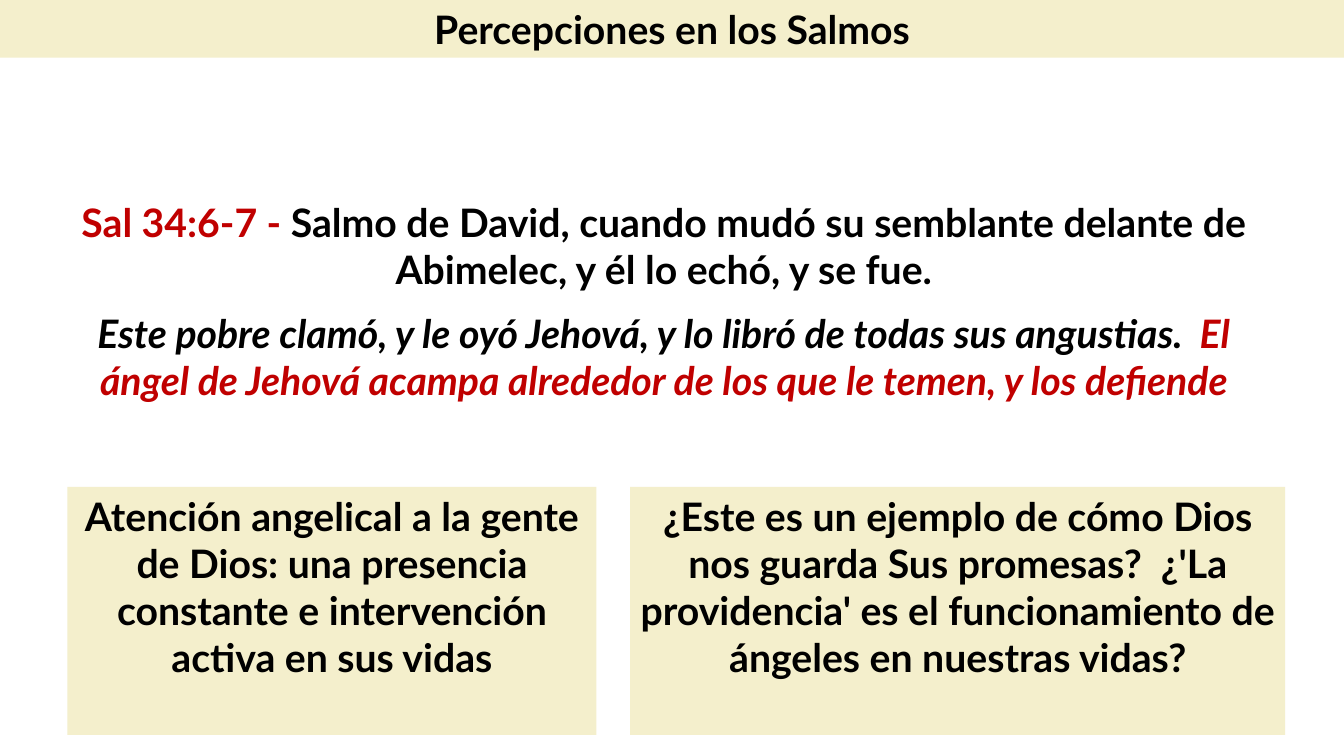
"""Build the slide on Psalm 34 and the care of angels."""
import pptx
import pptx.dml.color
import pptx.enum.shapes
import pptx.enum.text
import pptx.oxml.ns
import pptx.util
from dataclasses import dataclass
from pptx.util import Cm


@dataclass(frozen=True)
class Theme:
    font: str = "Lato"
    size: int = 28
    ink: str = "000000"
    accent: str = "C00000"
    cream: str = "F4EFCC"


theme = Theme()


def style_run(run, color, italic=False):
    run.font.name = theme.font
    run.font.size = pptx.util.Pt(theme.size)
    run.font.bold = True
    run.font.italic = italic
    run.font.color.rgb = pptx.dml.color.RGBColor.from_string(color)


def place(block, left, top, width, height, fill=None):
    block.left, block.top = Cm(left), Cm(top)
    block.width, block.height = Cm(width), Cm(height)
    block.text_frame.word_wrap = True
    block.text_frame.auto_size = pptx.enum.text.MSO_AUTO_SIZE.NONE
    block.text_frame.vertical_anchor = pptx.enum.text.MSO_ANCHOR.TOP
    if fill:
        block.fill.solid()
        block.fill.fore_color.rgb = pptx.dml.color.RGBColor.from_string(fill)
    for paragraph in block.text_frame.paragraphs:
        paragraph.alignment = pptx.enum.text.PP_ALIGN.CENTER


presentation = pptx.Presentation()
presentation.slide_width = Cm(33.87)
presentation.slide_height = Cm(19.05)
slide = presentation.slides.add_slide(presentation.slide_layouts[1])

heading = slide.shapes.title
heading.text_frame.text = "Percepciones en los Salmos"
style_run(heading.text_frame.paragraphs[0].runs[0], theme.ink)
place(heading, 0, 0, 33.87, 1.45, theme.cream)

psalm = slide.placeholders[1]
verses = [
    (0, False, [
        ("Sal 34:6-7 - ", theme.accent),
        ("Salmo de David, cuando mudó su semblante delante de Abimelec, "
         "y él lo echó, y se fue.", theme.ink),
    ]),
    (12, True, [
        ("Este pobre clamó, y le oyó Jehová, y lo libró de todas sus angustias.  ", theme.ink),
        ("El ángel de Jehová acampa alrededor de los que le temen, y los defiende", theme.accent),
    ]),
]
psalm.text_frame.text = "\n".join("" for _ in verses)
for verse, (gap, italic, phrases) in zip(psalm.text_frame.paragraphs, verses):
    verse.space_before = pptx.util.Pt(gap)
    properties = verse._p.get_or_add_pPr()
    properties.set("marL", "0")
    properties.set("indent", "0")
    properties.append(pptx.oxml.parse_xml(f"<a:buNone {pptx.oxml.ns.nsdecls('a')}/>"))
    for words, color in phrases:
        phrase = verse.add_run()
        phrase.text = words
        style_run(phrase, color, italic)
place(psalm, 1.27, 4.88, 30.91, 6.7)

reflections = [
    (1.7, 13.33, "Atención angelical a la gente de Dios: una presencia constante "
                 "e intervención activa en sus vidas"),
    (15.88, 16.51, "¿Este es un ejemplo de cómo Dios nos guarda Sus promesas?  "
                   "¿'La providencia' es el funcionamiento de ángeles en nuestras vidas?"),
]
for left, width, words in reflections:
    reflection = slide.shapes.add_shape(
        pptx.enum.shapes.MSO_SHAPE.RECTANGLE, Cm(left), Cm(12.27), Cm(width), Cm(6.25))
    reflection.shadow.inherit = False
    reflection.line.fill.background()
    reflection.text_frame.text = words
    style_run(reflection.text_frame.paragraphs[0].runs[0], theme.ink)
    place(reflection, left, 12.27, width, 6.25, theme.cream)

presentation.save("out.pptx")
